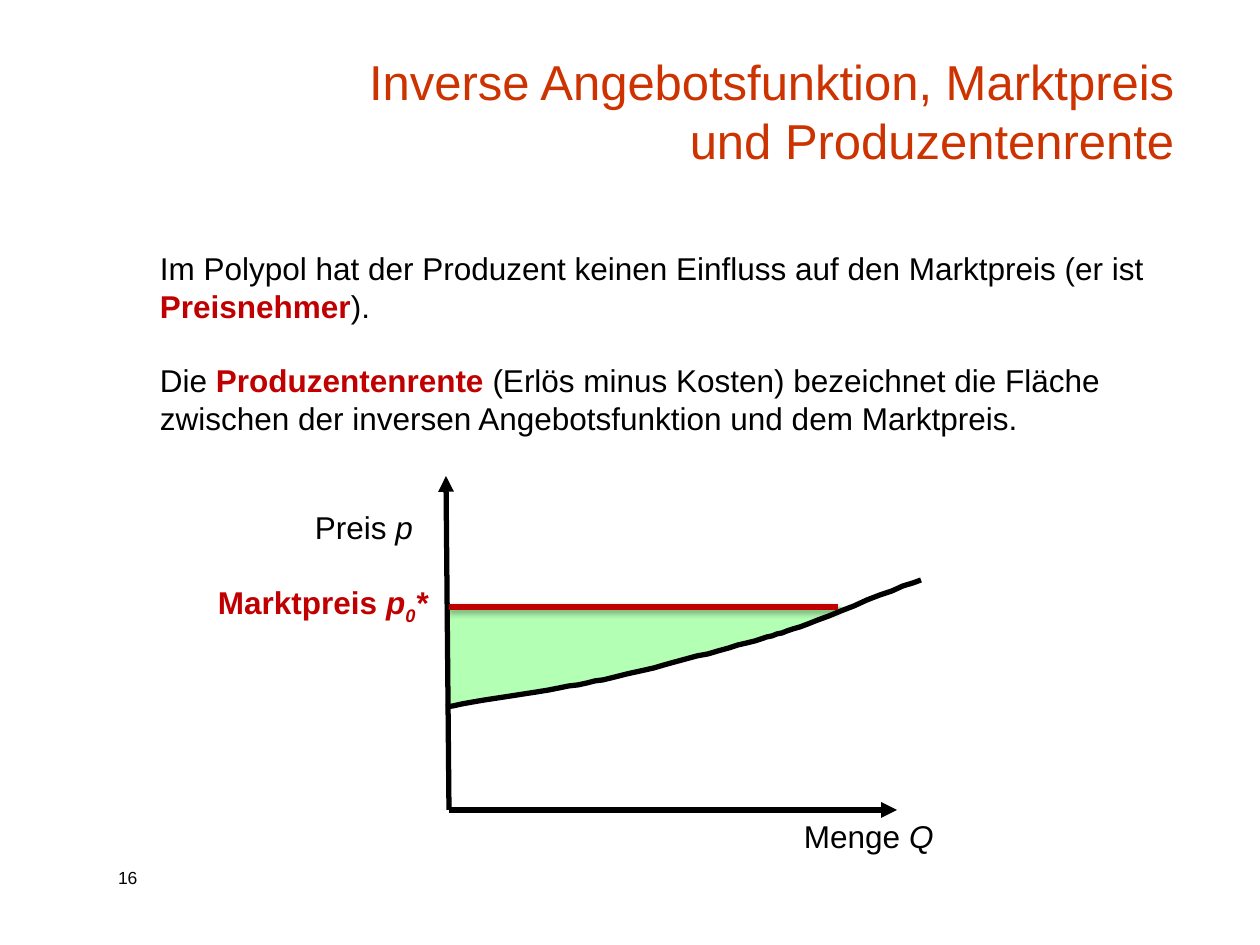
import pptx
import pptx.util
import pptx.dml.color
import pptx.enum.shapes
import pptx.enum.text
from lxml import etree

PX = 914400 / 126
NS = "http://schemas.openxmlformats.org/drawingml/2006/main"
BLACK, RED, ORANGE, GREEN = "000000", "C00000", "CC3300", "B3FFB3"


def rgb(code):
    return pptx.dml.color.RGBColor.from_string(code)


def write(shape, paras, size, pad=(0, 0, 0, 0)):
    """Fill a shape with paragraphs of (text, colour, bold, italic, baseline) runs."""
    frame = shape.text_frame
    frame.word_wrap = True
    (frame.margin_left, frame.margin_top,
     frame.margin_right, frame.margin_bottom) = [round(v * PX) for v in pad]
    for i, runs in enumerate(paras):
        para = frame.paragraphs[0] if i == 0 else frame.add_paragraph()
        if i:
            para.space_before = pptx.util.Pt(21)
        for text, color, bold, italic, base in runs:
            run = para.add_run()
            run.text = text
            run.font.name = "Arial"
            run.font.size = pptx.util.Pt(size)
            run.font.color.rgb = rgb(color)
            run.font.bold = bold
            run.font.italic = italic
            if base:
                run._r.get_or_add_rPr().set("baseline", str(base))


deck = pptx.Presentation()
deck.slide_width = round(1260 * PX)
deck.slide_height = round(945 * PX)
slide = deck.slides.add_slide(deck.slide_layouts[5])
shapes = slide.shapes

# Title
title = shapes.title
title.left, title.top, title.width, title.height = [
    round(v * PX) for v in (263, 53, 924, 122)]
write(title, [[("Inverse Angebotsfunktion, Marktpreis und Produzentenrente",
                ORANGE, False, False, 0)]], 28, (20, 6, 13, 6))
title.text_frame.vertical_anchor = pptx.enum.text.MSO_ANCHOR.BOTTOM
title.text_frame.auto_size = pptx.enum.text.MSO_AUTO_SIZE.NONE
title.text_frame.paragraphs[0].alignment = pptx.enum.text.PP_ALIGN.RIGHT

# Surplus area
area = [(449, 607), (852, 607), (774, 634), (696, 659), (552, 689), (449, 707)]
pen = shapes.build_freeform(*area[0], scale=PX)
pen.add_line_segments(area[1:], close=True)
surplus = pen.convert_to_shape()
surplus.shadow.inherit = False
surplus.fill.solid()
surplus.fill.fore_color.rgb = rgb(GREEN)
surplus.line.fill.background()

# Supply curve: cubic pieces, each sampled in ten steps
start = (446, 707)
cubics = [
    ((465, 703), (527, 693), (559, 688)),
    ((593, 682), (614, 678), (645, 670)),
    ((675, 663), (719, 650), (747, 643)),
    ((775, 635), (779, 634), (808, 624)),
    ((837, 612), (898, 588), (921, 580)),
]
curve = [start]
for one, two, end in cubics:
    first = curve[-1]
    for step in range(1, 11):
        t = step / 10
        u = 1 - t
        curve.append(tuple(
            u**3 * a + 3 * u * u * t * b + 3 * u * t * t * c + t**3 * d
            for a, b, c, d in zip(first, one, two, end)))
pen = shapes.build_freeform(*start, scale=PX)
pen.add_line_segments(curve[1:], close=False)
supply = pen.convert_to_shape()
supply.shadow.inherit = False
supply.fill.background()
supply.line.color.rgb = rgb(BLACK)
supply.line.width = pptx.util.Pt(3)

# Axes and market price
for ends, color, arrow in [
    ((449, 810, 897, 810), BLACK, True),
    ((449, 810, 446, 476), BLACK, True),
    ((449, 607, 838, 607), RED, False),
]:
    line = shapes.add_connector(pptx.enum.shapes.MSO_CONNECTOR.STRAIGHT,
                                *[round(v * PX) for v in ends])
    line.line.color.rgb = rgb(color)
    line.line.width = pptx.util.Pt(3)
    effects = etree.SubElement(line._element.spPr, f"{{{NS}}}effectLst")
    if arrow:
        etree.SubElement(line.line._get_or_add_ln(), f"{{{NS}}}tailEnd", type="triangle")
    else:
        shade = etree.SubElement(effects, f"{{{NS}}}outerShdw", blurRad="40000",
                                 dist="23000", dir="5400000", rotWithShape="0")
        tint = etree.SubElement(shade, f"{{{NS}}}srgbClr", val=BLACK)
        etree.SubElement(tint, f"{{{NS}}}alpha", val="35000")

# Body text, axis labels and page number
body = [
    [("Im Polypol hat der Produzent keinen Einfluss auf den Marktpreis (er ist ",
      BLACK, False, False, 0),
     ("Preisnehmer", RED, True, False, 0),
     (").", BLACK, False, False, 0)],
    [("Die ", BLACK, False, False, 0),
     ("Produzentenrente ", RED, True, False, 0),
     ("(Erlös minus Kosten) bezeichnet die Fläche zwischen der inversen "
      "Angebotsfunktion und dem Marktpreis.", BLACK, False, False, 0)],
]
price = [("Preis", BLACK, False, False, 0), (" p", BLACK, False, True, 0)]
amount = [("Menge", BLACK, False, False, 0), (" Q", BLACK, False, True, 0)]
market = [("Marktpreis", RED, True, False, 0), (" p", RED, True, True, 0),
          ("0", RED, True, True, -25000), ("*", RED, True, True, 0)]
number = [("16", BLACK, False, False, 0)]
inset = (13, 6, 13, 6)
none = (0, 0, 0, 0)
for place, paras, size, pad in [
    ((147, 243, 1075, 204), body, 18, inset),
    ((315, 508, 164, 38), [price], 18, none),
    ((804, 817, 140, 44), [amount], 18, none),
    ((218, 583, 215, 38), [market], 18, none),
    ((105, 861, 84, 34), [number], 10, inset),
]:
    box = shapes.add_textbox(*[round(v * PX) for v in place])
    write(box, paras, size, pad)

deck.save("out.pptx")
